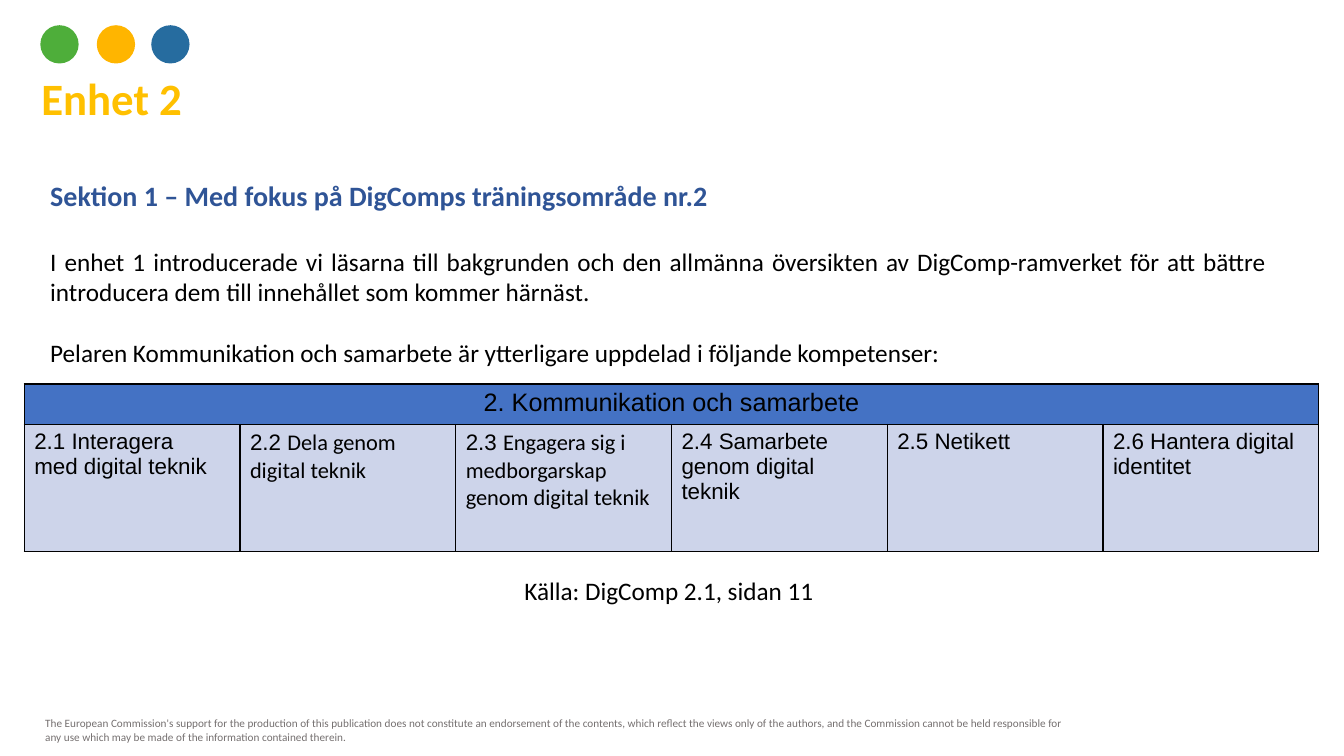
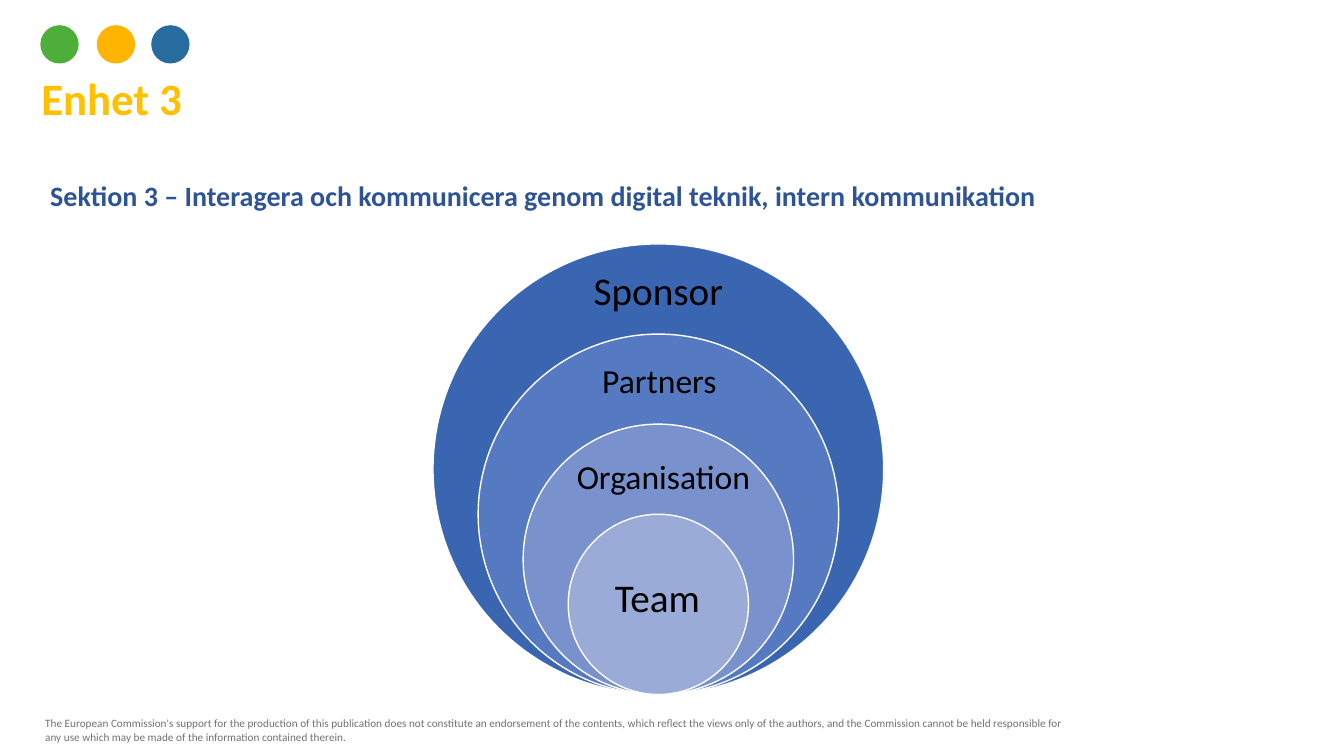
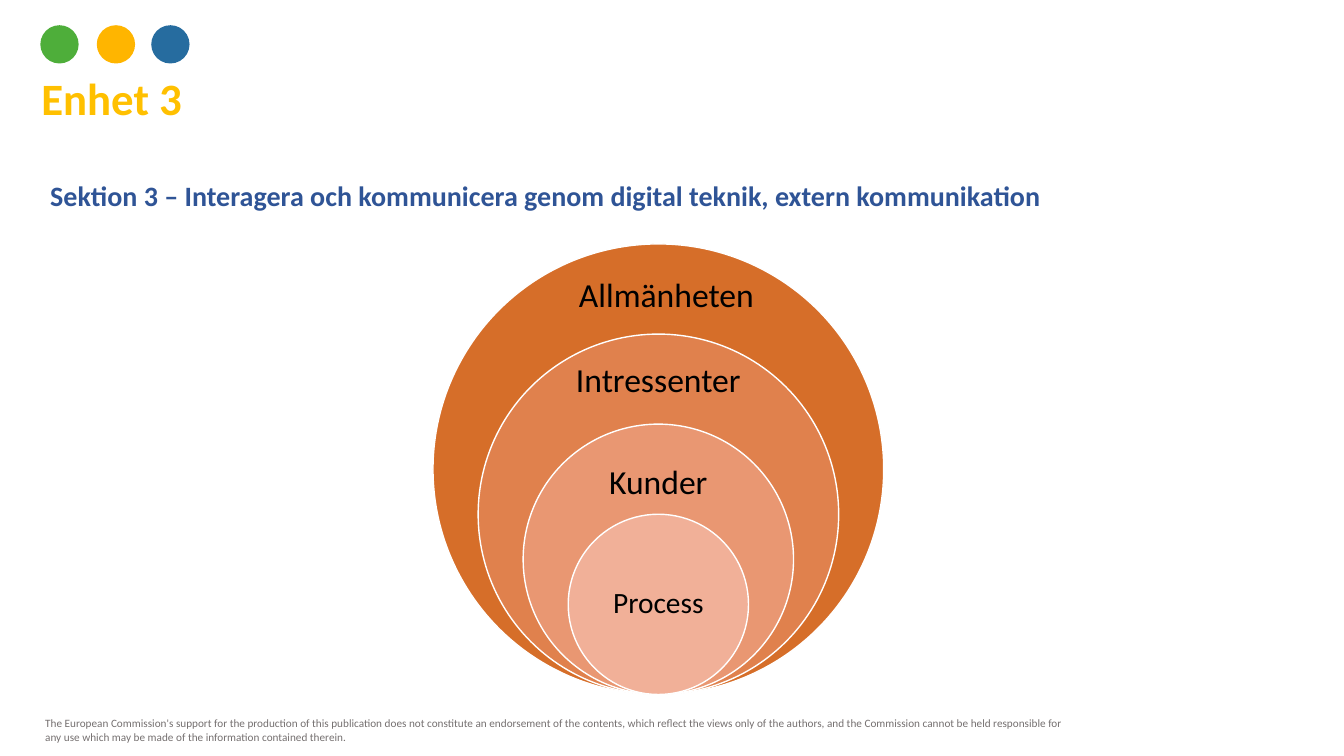
from dataclasses import dataclass

from lxml import etree
from pptx import Presentation
from pptx.dml.color import RGBColor
from pptx.enum.shapes import MSO_SHAPE
from pptx.enum.text import MSO_ANCHOR, MSO_AUTO_SIZE, PP_ALIGN
from pptx.oxml.ns import qn
from pptx.util import Inches, Pt

OVAL = MSO_SHAPE.OVAL
TOP = MSO_ANCHOR.TOP
NO_AUTO_SIZE = MSO_AUTO_SIZE.NONE
LEFT, CENTER, JUSTIFY = PP_ALIGN.LEFT, PP_ALIGN.CENTER, PP_ALIGN.JUSTIFY
TITLE_ONLY = 5
NBSP = chr(160)


@dataclass(frozen=True)
class Theme:
    font: str = "Calibri"
    table_font: str = "Arial"
    title: str = "FFC000"
    heading: str = "2F5496"
    text: str = "000000"
    footer: str = "757070"
    line: str = "FFFFFF"
    border: str = "000000"
    table_header: str = "4472C4"
    table_body: str = "CDD4EA"
    dots: tuple = ("4EAE3A", "FFB500", "266C9F")
    blues: tuple = ("3A66B1", "567AC2", "7992CD", "9BABD7")
    oranges: tuple = ("D66E29", "E0814D", "E99772", "F1B098")
    title_size: int = 32
    heading_size: int = 20
    body_size: int = 18
    cell_size: int = 16
    footer_size: int = 8


THEME = Theme()
DOT_LEFTS = (0.4, 0.96, 1.5)
CIRCLE_CENTER, CIRCLE_BOTTOM, CIRCLE_DIAMETER = 6.53, 6.89, 4.47
LABEL_WIDTH = 2.4
FOOTER = (
    "The European Commission's support for the production of this publication does not "
    "constitute an endorsement of the contents, which reflect the views only of the authors, "
    "and the Commission cannot be held responsible for any use which may be made of the "
    "information contained therein."
)
INTRODUCTION = (
    "I enhet 1 introducerade vi läsarna till bakgrunden och den allmänna översikten av "
    "DigComp-ramverket för att bättre introducera dem till innehållet som kommer härnäst."
)
COMPETENCES = (
    (f"2.1 Interagera med{NBSP}digital teknik", ""),
    ("2.2 ", "Dela genom digital teknik"),
    ("2.3 ", "Engagera sig i medborgarskap genom digital teknik"),
    ("2.4 Samarbete genom digital teknik", ""),
    ("2.5 Netikett", ""),
    ("2.6 Hantera digital identitet", ""),
)


def color(value):
    return RGBColor.from_string(value)


def add_run(paragraph, text, size=THEME.body_size, font=THEME.font, fill=THEME.text, bold=False):
    run = paragraph.add_run()
    run.text = text
    run.font.size = Pt(size)
    run.font.name = font
    run.font.bold = bold
    run.font.color.rgb = color(fill)


def write_paragraph(frame, text, align=LEFT, space_before=0, **run_format):
    """Fill the frame's empty first paragraph, or add another one."""
    paragraph = frame.paragraphs[0]
    if paragraph.runs:
        paragraph = frame.add_paragraph()
    paragraph.alignment = align
    paragraph.space_before = Pt(space_before)
    add_run(paragraph, text, **run_format)


def add_text(slide, left, top, width, height, text, **text_format):
    box = slide.shapes.add_textbox(Inches(left), Inches(top), Inches(width), Inches(height))
    box.text_frame.word_wrap = True
    write_paragraph(box.text_frame, text, **text_format)
    return box.text_frame


def add_oval(slide, left, top, width, height, fill, line=None):
    oval = slide.shapes.add_shape(OVAL, Inches(left), Inches(top), Inches(width), Inches(height))
    oval.shadow.inherit = False
    oval.fill.solid()
    oval.fill.fore_color.rgb = color(fill)
    if line:
        oval.line.color.rgb = color(line)
        oval.line.width = Pt(1)
    else:
        oval.line.fill.background()


def set_title(slide, text):
    title = slide.shapes.title
    title.left, title.top = Inches(0.31), Inches(0.65)
    title.width, title.height = Inches(1.68), Inches(0.64)
    frame = title.text_frame
    frame.auto_size = NO_AUTO_SIZE
    frame.vertical_anchor = TOP
    write_paragraph(frame, text, size=THEME.title_size, fill=THEME.title, bold=True)


def add_unit_slide(presentation, title, heading, height=0.44):
    """Add a slide with the shared parts; return it and the frame under its heading."""
    slide = presentation.slides.add_slide(presentation.slide_layouts[TITLE_ONLY])
    set_title(slide, title)
    add_text(slide, 0.35, 7.06, 10.46, 0.37, FOOTER, size=THEME.footer_size, fill=THEME.footer)
    for left, fill in zip(DOT_LEFTS, THEME.dots):
        add_oval(slide, left, 0.25, 0.38, 0.38, fill)
    frame = add_text(slide, 0.4, 1.72, 12.26, height, heading, align=JUSTIFY,
                     size=THEME.heading_size, fill=THEME.heading, bold=True)
    return slide, frame


def format_cell(cell, fill):
    properties = cell._tc.get_or_add_tcPr()
    for side in ("a:lnL", "a:lnR", "a:lnT", "a:lnB"):
        border = etree.SubElement(properties, qn(side), w=str(Pt(1)))
        solid = etree.SubElement(border, qn("a:solidFill"))
        etree.SubElement(solid, qn("a:srgbClr"), val=THEME.border)
    cell.fill.solid()
    cell.fill.fore_color.rgb = color(fill)


def add_competence_table(slide, header, competences):
    count = len(competences)
    table = slide.shapes.add_table(2, count, Inches(0.24), Inches(3.81),
                                   Inches(2.14 * count), Inches(1.66)).table
    table.first_row = table.horz_banding = False
    table.rows[0].height, table.rows[1].height = Inches(0.4), Inches(1.26)
    for column, (arial_text, calibri_text) in enumerate(competences):
        format_cell(table.cell(0, column), THEME.table_header)
        cell = table.cell(1, column)
        format_cell(cell, THEME.table_body)
        paragraph = cell.text_frame.paragraphs[0]
        add_run(paragraph, arial_text, size=THEME.cell_size, font=THEME.table_font)
        if calibri_text:
            add_run(paragraph, calibri_text, size=THEME.cell_size)
    header_cell = table.cell(0, 0)
    header_cell.merge(table.cell(0, count - 1))
    write_paragraph(header_cell.text_frame, header, align=CENTER, font=THEME.table_font)


def add_nested_circles(slide, fills, labels):
    """Stack circles on one bottom point; a label is (text, size, centre, top)."""
    for index, fill in enumerate(fills):
        diameter = CIRCLE_DIAMETER * (1 - 0.2 * index)
        add_oval(slide, CIRCLE_CENTER - diameter / 2, CIRCLE_BOTTOM - diameter,
                 diameter, diameter, fill, THEME.line)
    for text, size, center, top in labels:
        add_text(slide, center - LABEL_WIDTH / 2, top, LABEL_WIDTH, 0.5, text,
                 align=CENTER, size=size)


def add_framework_slide(presentation):
    slide, frame = add_unit_slide(
        presentation, "Enhet 2", "Sektion 1 – Med fokus på DigComps träningsområde nr.2", 1.99)
    write_paragraph(frame, INTRODUCTION, align=JUSTIFY, space_before=24.4)
    write_paragraph(
        frame, "Pelaren Kommunikation och samarbete är ytterligare uppdelad i följande kompetenser:",
        align=JUSTIFY, space_before=22)
    add_competence_table(slide, "2. Kommunikation och samarbete", COMPETENCES)
    add_text(slide, 3.91, 5.66, 5.45, 0.4, "Källa: DigComp 2.1, sidan 11", align=CENTER)


def add_communication_slide(presentation, kind, fills, labels):
    heading = f"Sektion 3 – Interagera och kommunicera genom digital teknik, {kind} kommunikation"
    slide, _ = add_unit_slide(presentation, "Enhet 3", heading)
    add_nested_circles(slide, fills, labels)


def main():
    presentation = Presentation()
    presentation.slide_width, presentation.slide_height = Inches(13.33), Inches(7.5)
    add_framework_slide(presentation)
    add_communication_slide(presentation, "intern", THEME.blues, (
        ("Sponsor", 28, 6.53, 2.59),
        ("Partners", 24, 6.54, 3.52),
        ("Organisation", 24, 6.58, 4.47),
        ("Team", 28, 6.52, 5.64),
    ))
    add_communication_slide(presentation, "extern", THEME.oranges, (
        ("Allmänheten", 24, 6.61, 2.67),
        ("Intressenter", 24, 6.53, 3.51),
        ("Kunder", 24, 6.53, 4.52),
        ("Process", 21, 6.53, 5.75),
    ))
    presentation.save("out.pptx")


if __name__ == "__main__":
    main()
